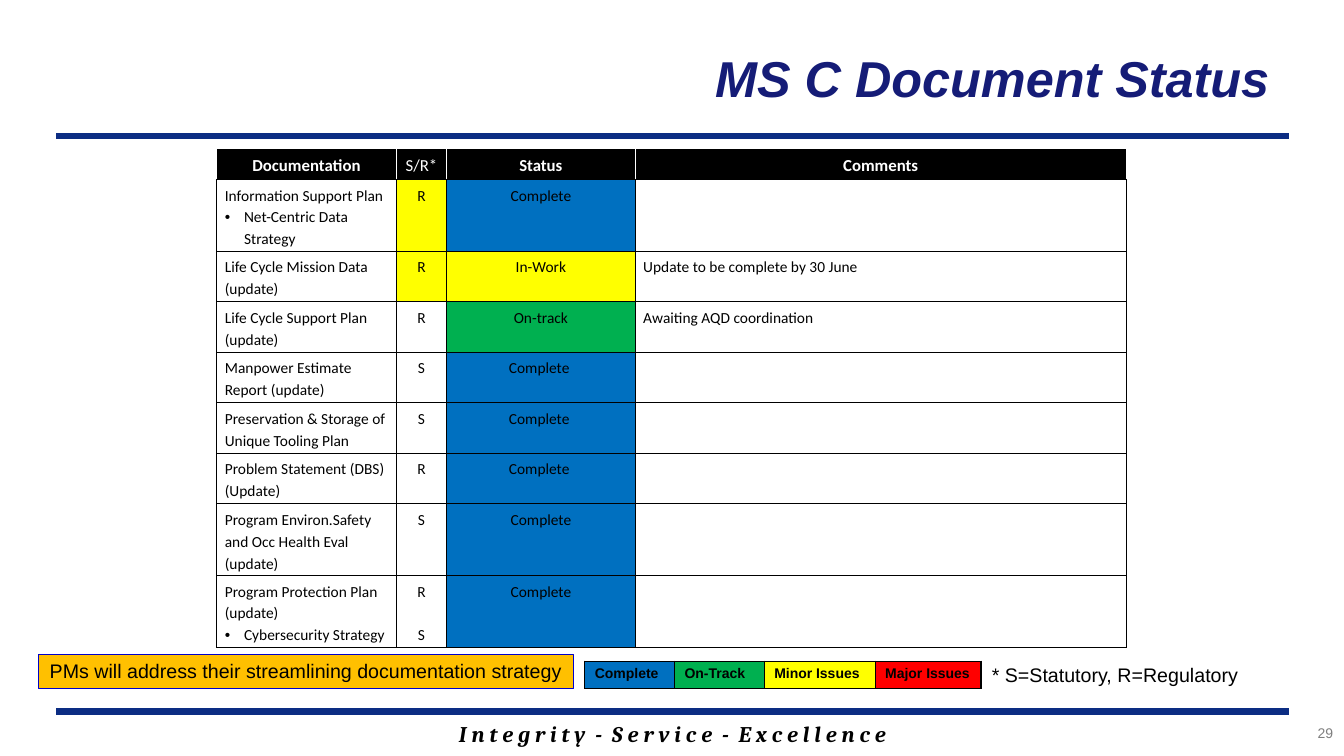
from lxml import etree
from pptx import Presentation
from pptx.dml.color import RGBColor
from pptx.enum.shapes import MSO_CONNECTOR, MSO_SHAPE
from pptx.enum.text import MSO_ANCHOR, PP_ALIGN
from pptx.oxml.ns import qn
from pptx.util import Inches, Pt

LEFT, CENTER, RIGHT = PP_ALIGN.LEFT, PP_ALIGN.CENTER, PP_ALIGN.RIGHT
TOP, MIDDLE = MSO_ANCHOR.TOP, MSO_ANCHOR.MIDDLE
LINE, RECT = MSO_CONNECTOR.STRAIGHT, MSO_SHAPE.RECTANGLE
BLACK = RGBColor(0, 0, 0)
WHITE = RGBColor(0xFF, 0xFF, 0xFF)
NAVY = RGBColor(0x15, 0x1C, 0x77)
RULE = RGBColor(0x0C, 0x2D, 0x83)
BLUE = RGBColor(0x00, 0x70, 0xC0)
GREEN = RGBColor(0x00, 0xB0, 0x50)
YELLOW = RGBColor(0xFF, 0xFF, 0x00)
RED = RGBColor(0xFF, 0x00, 0x00)
ORANGE = RGBColor(0xFF, 0xC0, 0x00)
EDGE = RGBColor(0x00, 0x00, 0xCC)
GREY = RGBColor(0x7F, 0x7F, 0x7F)

HEADERS = ["Documentation", "S/R*", "Status", "Comments"]
DOCUMENTS = [
    ("Information Support Plan\n• Net-Centric Data Strategy", "R", YELLOW, "Complete", BLUE, ""),
    ("Life Cycle Mission Data (update)", "R", YELLOW, "In-Work", YELLOW,
     "Update to be complete by 30 June"),
    ("Life Cycle Support Plan (update)", "R", None, "On-track", GREEN,
     "Awaiting AQD coordination"),
    ("Manpower Estimate Report (update)", "S", None, "Complete ", BLUE, ""),
    ("Preservation & Storage of Unique Tooling Plan", "S", None, "Complete ", BLUE, ""),
    ("Problem Statement (DBS) (Update)", "R", None, "Complete ", BLUE, ""),
    ("Program Environ.Safety and Occ Health Eval (update)", "S", None, "Complete", BLUE, ""),
    ("Program Protection Plan (update)\n• Cybersecurity Strategy", "R\nS", None,
     "Complete", BLUE, ""),
]
LEGEND = [("Complete", BLUE), ("On-Track", GREEN), ("Minor Issues", YELLOW), ("Major Issues", RED)]


def set_font(p, size, color, name="Arial", bold=False, italic=False):
    for r in p.runs:
        f = r.font
        f.name, f.size, f.bold, f.italic = name, Pt(size), bold, italic
        f.color.rgb = color


def fill_text(sp, text, align, size, color, anchor=TOP, wrap=True, **style):
    tf = sp.text_frame
    tf.word_wrap = wrap
    tf.vertical_anchor = anchor
    p = tf.paragraphs[0]
    p.text = text
    p.alignment = align
    set_font(p, size, color, **style)


def add_text(s, box, *args, **style):
    fill_text(s.shapes.add_textbox(*map(Inches, box)), *args, **style)


def add_rule(s, x, y, width):
    ln = s.shapes.add_connector(LINE, *map(Inches, (x, y, x + width, y)))
    ln.line.color.rgb = RULE
    ln.line.width = Pt(4.5)
    etree.SubElement(ln._element.spPr, qn("a:effectLst"))


def add_bullet(p):
    pPr = p._p.get_or_add_pPr()
    pPr.set("marL", str(Inches(0.19)))
    pPr.set("indent", str(Inches(-0.19)))
    etree.SubElement(pPr, qn("a:buFont"), typeface="Arial")
    etree.SubElement(pPr, qn("a:buChar"), char="•")


def style_cell(cell, fill, margins, edge=BLACK):
    cell.margin_left = cell.margin_right = Inches(margins[0])
    cell.margin_top = cell.margin_bottom = Inches(margins[1])
    if fill is None:
        cell.fill.background()
    else:
        cell.fill.solid()
        cell.fill.fore_color.rgb = fill
    tcPr = cell._tc.get_or_add_tcPr()
    for i, side in enumerate(("lnL", "lnR", "lnT", "lnB")):
        ln = etree.Element(qn("a:" + side), w=str(Pt(1)))
        solid = etree.SubElement(ln, qn("a:solidFill"))
        color = BLACK if side == "lnB" else edge
        etree.SubElement(solid, qn("a:srgbClr"), val=str(color))
        tcPr.insert(i, ln)


def add_grid(s, box, cols, rows):
    tbl = s.shapes.add_table(len(rows), len(cols), *map(Inches, box)).table
    tbl.first_row = tbl.horz_banding = False
    for col, width in zip(tbl.columns, cols):
        col.width = Inches(width)
    for row, height in zip(tbl.rows, rows):
        row.height = Inches(height)
    return tbl


def write_cell(cell, text, align, size, color, bold):
    tf = cell.text_frame
    tf.text = text.replace("• ", "")
    for i, (p, line) in enumerate(zip(tf.paragraphs, text.split("\n"))):
        p.alignment = align
        p.line_spacing = 1.15
        bullet = line.startswith("• ")
        if bullet:
            add_bullet(p)
        elif i:
            p.space_before = Pt(15.5)
        set_font(p, size, color, "Calibri", bold)


def document_table(s, box):
    tbl = add_grid(s, box, [1.78, 0.5, 1.87, 4.87],
                   [0.31, 0.71] + [0.5] * 5 + [0.71] * 2)
    margins = (0.08, 0.04)
    for c, text in enumerate(HEADERS):
        cell = tbl.cell(0, c)
        style_cell(cell, BLACK, margins, WHITE)
        write_cell(cell, text, CENTER, 12, WHITE, text != "S/R*")
    for r, (name, basis, basis_fill, status, status_fill, comment) in enumerate(DOCUMENTS, 1):
        texts = (name, basis, status, comment)
        fills = (None, basis_fill, status_fill, None)
        for c, (text, fill) in enumerate(zip(texts, fills)):
            cell = tbl.cell(r, c)
            style_cell(cell, fill, margins)
            write_cell(cell, text, CENTER if c in (1, 2) else LEFT, 11, BLACK, False)


def legend(s, box):
    tbl = add_grid(s, box, [0.89, 0.89, 1.1, 1.05], [box[3]])
    for c, (text, fill) in enumerate(LEGEND):
        cell = tbl.cell(0, c)
        style_cell(cell, fill, (0.1, 0.05))
        cell.text_frame.text = text
        set_font(cell.text_frame.paragraphs[0], 10, BLACK, bold=True)


def callout(s, box):
    sp = s.shapes.add_shape(RECT, *map(Inches, box))
    sp.shadow.inherit = False
    sp.fill.solid()
    sp.fill.fore_color.rgb = ORANGE
    sp.line.color.rgb = EDGE
    sp.line.width = Pt(0.75)
    fill_text(sp, "PMs will address their streamlining documentation strategy",
              CENTER, 14, BLACK, wrap=False)


def header(s, x, y, width, height):
    add_rule(s, x, y + height, width)
    add_text(s, (x + width - 8.09, y, 8.14, 1.25), "MS C Document Status ", RIGHT, 36, NAVY,
             anchor=MIDDLE, bold=True, italic=True)


def footer(s, x, y, width):
    add_rule(s, x, y, width)
    add_text(s, (x + 1.33, y + 0.04, width - 2.66, 0.37),
             "I n t e g r i t y  -  S e r v i c e  -  E x c e l l e n c e",
             CENTER, 16, BLACK, name="Cambria", bold=True, italic=True)
    add_text(s, (x + width - 1.13, y + 0.08, 1.67, 0.33), "29", RIGHT, 10, GREY)


def main():
    prs = Presentation()
    prs.slide_width, prs.slide_height = Inches(13.33), Inches(7.5)
    s = prs.slides.add_slide(prs.slide_layouts[6])
    header(s, 0.56, 0.14, 12.22, 1.21)
    footer(s, 0.56, 7.06, 12.22)
    document_table(s, (2.15, 1.47, 9.02, 4.94))
    add_text(s, (9.73, 6.53, 2.66, 0.34), "* S=Statutory, R=Regulatory",
             CENTER, 14, BLACK, wrap=False)
    legend(s, (5.8, 6.56, 3.93, 0.27))
    callout(s, (0.38, 6.49, 5.31, 0.34))
    prs.save("out.pptx")


if __name__ == "__main__":
    main()
